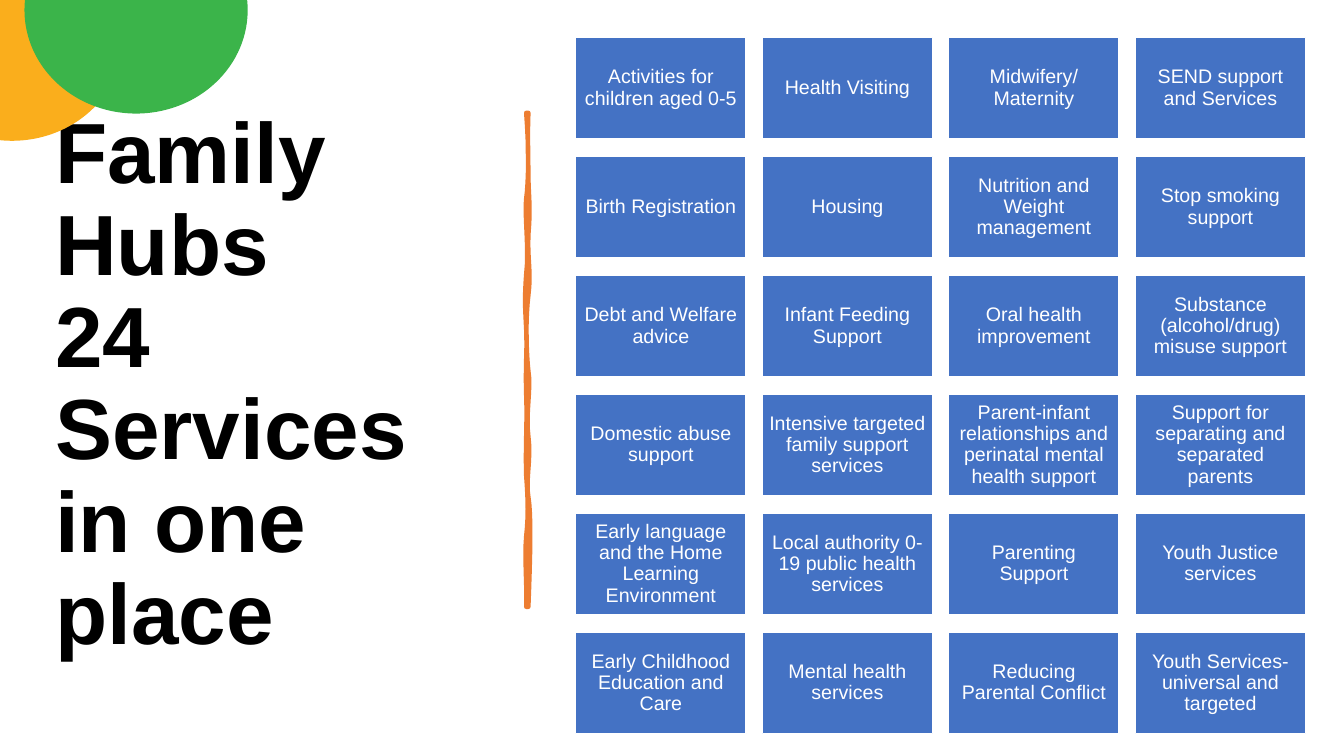
from pptx import Presentation
from pptx.dml.color import RGBColor
from pptx.enum.shapes import MSO_SHAPE as Shape
from pptx.enum.text import MSO_ANCHOR as Anchor, PP_ALIGN as Align
from pptx.util import Inches, Pt

SERVICES = [
    ["Activities for children aged 0-5", "Health Visiting",
     "Midwifery/ Maternity", "SEND support and Services"],
    ["Birth Registration", "Housing",
     "Nutrition and Weight management", "Stop smoking support"],
    ["Debt and Welfare advice", "Infant Feeding Support",
     "Oral health improvement", "Substance (alcohol/drug) misuse support"],
    ["Domestic abuse support", "Intensive targeted family support services",
     "Parent-infant relationships and perinatal mental health support",
     "Support for separating and separated parents"],
    ["Early language and the Home Learning Environment",
     "Local authority 0-19 public health services",
     "Parenting Support", "Youth Justice services"],
    ["Early Childhood Education and Care", "Mental health services",
     "Reducing Parental Conflict", "Youth Services-universal and targeted"],
]
GRID_LEFT, GRID_TOP = 5.71, 0.37
COLUMN_STEP, ROW_STEP = 1.85, 1.18
TILE_WIDTH, TILE_HEIGHT = 1.69, 1.01

DIVIDER_START = (5.24, 1.12)
# Each curve: two control points and an end point
DIVIDER_CURVES = [
    [(5.23, 1.42), (5.24, 1.49), (5.24, 1.77)],
    [(5.25, 2.06), (5.26, 2.07), (5.24, 2.33)],
    [(5.23, 2.59), (5.27, 2.69), (5.24, 2.93)],
    [(5.21, 3.17), (5.22, 3.5), (5.24, 3.68)],
    [(5.27, 3.86), (5.21, 4.1), (5.24, 4.33)],
    [(5.27, 4.56), (5.21, 4.76), (5.24, 4.93)],
    [(5.27, 5.11), (5.26, 5.51), (5.24, 6.02)],
    [(5.23, 6.02), (5.23, 6.02), (5.22, 6.02)],
    [(5.23, 5.84), (5.2, 5.53), (5.22, 5.32)],
    [(5.24, 5.12), (5.24, 5), (5.22, 4.72)],
    [(5.21, 4.44), (5.23, 4.22), (5.22, 3.92)],
    [(5.21, 3.63), (5.23, 3.47), (5.22, 3.27)],
    [(5.21, 3.07), (5.2, 2.97), (5.22, 2.72)],
    [(5.25, 2.47), (5.2, 2.12), (5.22, 1.97)],
    [(5.24, 1.82), (5.25, 1.52), (5.22, 1.12)],
]


def color(value):
    return RGBColor.from_string(value)


def curve_points(start, curves, steps=8):
    """Return points along a chain of cubic Bezier curves."""
    points = []
    for first, second, end in curves:
        for step in range(1, steps + 1):
            t = step / steps
            u = 1 - t
            points.append(tuple(
                u**3 * a + 3 * u * u * t * b + 3 * u * t * t * c + t**3 * d
                for a, b, c, d in zip(start, first, second, end)))
        start = end
    return points


class SlideBuilder:
    font = "Arial"

    def __init__(self, slide):
        self.slide = slide

    def paint(self, shape, fill, line, width):
        shape.shadow.inherit = False
        shape.fill.solid()
        shape.fill.fore_color.rgb = color(fill)
        shape.line.color.rgb = color(line)
        shape.line.width = Pt(width)

    def set_text(self, shape, text, size, ink, align, inset=(0.1, 0.05), bold=False):
        frame = shape.text_frame
        across, down = map(Inches, inset)
        frame_format = {
            "word_wrap": True, "vertical_anchor": Anchor.MIDDLE,
            "margin_left": across, "margin_right": across,
            "margin_top": down, "margin_bottom": down,
        }
        for name, value in frame_format.items():
            setattr(frame, name, value)
        paragraph = frame.paragraphs[0]
        paragraph.text = text
        paragraph.alignment = align
        paragraph.line_spacing = 0.9
        font_format = {"name": self.font, "size": Pt(size), "bold": bold}
        for run in paragraph.runs:
            for name, value in font_format.items():
                setattr(run.font, name, value)
            run.font.color.rgb = color(ink)

    def title(self, text, left, top, width, height):
        box = self.slide.shapes.add_textbox(*map(Inches, (left, top, width, height)))
        self.set_text(box, text, 61, "000000", Align.LEFT, bold=True)

    def tile(self, text, left, top):
        shape = self.slide.shapes.add_shape(
            Shape.RECTANGLE, *map(Inches, (left, top, TILE_WIDTH, TILE_HEIGHT)))
        self.paint(shape, "4472C4", "FFFFFF", 1)
        self.set_text(shape, text, 14, "FFFFFF", Align.CENTER, inset=(0.06, 0.06))

    def disc(self, left, top, fill):
        shape = self.slide.shapes.add_shape(
            Shape.FLOWCHART_CONNECTOR, *map(Inches, (left, top, 2.2, 2.04)))
        self.paint(shape, fill, fill, 1)

    def brush_stroke(self, start, curves, fill):
        builder = self.slide.shapes.build_freeform(*map(Inches, start))
        builder.add_line_segments(
            [(Inches(x), Inches(y)) for x, y in curve_points(start, curves)])
        self.paint(builder.convert_to_shape(), fill, fill, 3.25)


def main():
    presentation = Presentation()
    presentation.slide_width = Inches(13.33)
    presentation.slide_height = Inches(7.5)
    builder = SlideBuilder(
        presentation.slides.add_slide(presentation.slide_layouts[6]))

    builder.title("Family Hubs \v24 Services in one place", 0.45, 0.86, 4.5, 5.94)
    builder.brush_stroke(DIVIDER_START, DIVIDER_CURVES, "ED7D31")
    for row, services in enumerate(SERVICES):
        for column, service in enumerate(services):
            builder.tile(service, GRID_LEFT + column * COLUMN_STEP,
                         GRID_TOP + row * ROW_STEP)
    builder.disc(-0.98, -0.65, "FAAE1C")
    builder.disc(0.25, -0.92, "3BB44A")
    presentation.save("out.pptx")


if __name__ == "__main__":
    main()
